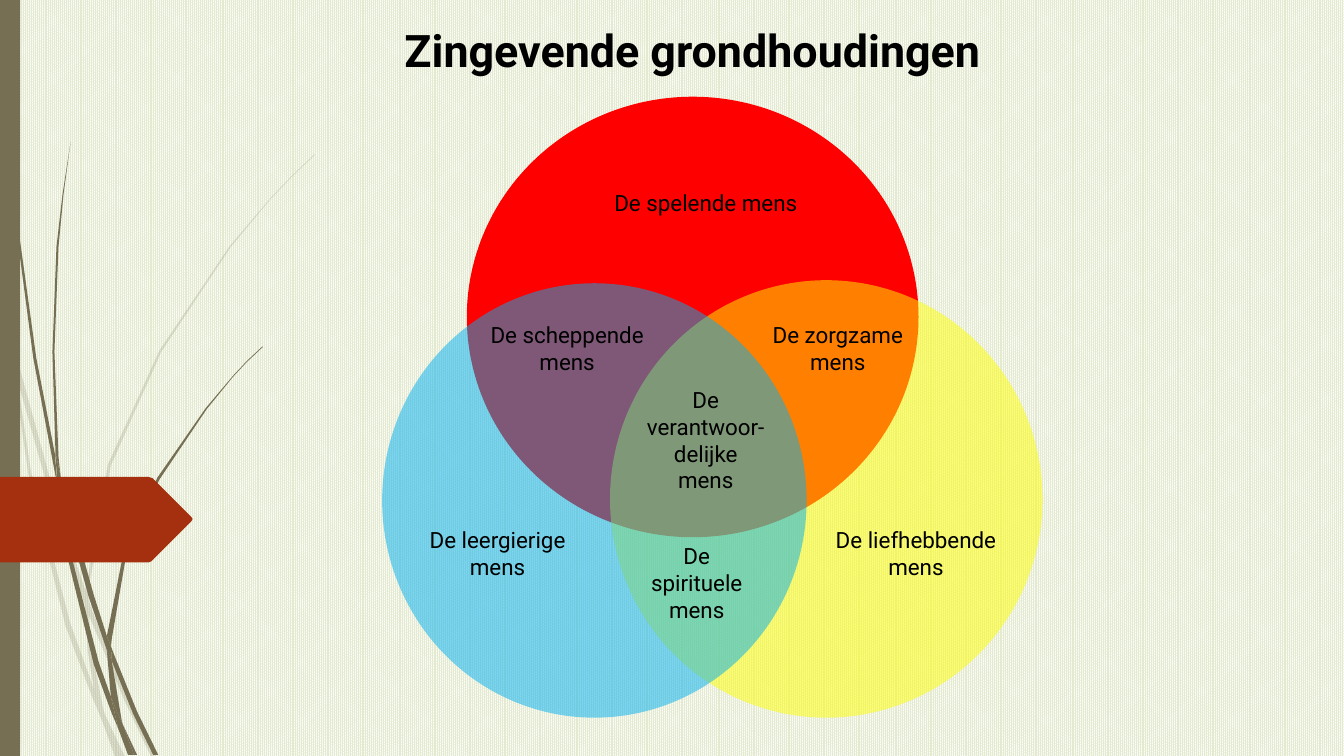
from lxml import etree
from pptx import Presentation
from pptx import util as u
from pptx.dml.color import RGBColor
from pptx.enum import dml, shapes, text
from pptx.oxml.ns import qn

FONT = "Roboto"
BLACK = "000000"
OLIVE = "766F54"
RUST = "A53010"

PALE_GRASS = [
    [(0.11, 3.5), (0.09, 3.22), (0, 2.82), (0, 2.99), (0.1, 3.44)],
    [(0.58, 5.22), (0.84, 5.99), (0.85, 5.86), (0.62, 5.2), (0.14, 3.45), (0.17, 3.76)],
    [(0.92, 6.07), (0.88, 5.96), (0.88, 6.1), (1.23, 6.94), (1.5, 7.51), (1.55, 7.51),
     (1.27, 6.92)],
    [(1.19, 7.51), (1.24, 7.51), (1.05, 7.11)],
    [(0.93, 6.83), (0.7, 6.19), (0.31, 4.69), (0.17, 3.76), (0.11, 3.5), (0.28, 4.7),
     (0.65, 6.21), (0.92, 6.93), (1.01, 7.14), (0.99, 7.07)],
    [(0.84, 5.99), (0.87, 6.46), (0.93, 6.83), (0.96, 6.92), (1.05, 7.11), (1.03, 7.06),
     (0.91, 6.46), (0.88, 6.1), (0.88, 6.08)],
    [(0.88, 5.84), (1.1, 4.62), (1.6, 3.49), (2.29, 2.45), (2.68, 1.98), (2.9, 1.75),
     (3.12, 1.54), (3.12, 1.53), (2.89, 1.75), (2.68, 1.97), (2.28, 2.44), (1.58, 3.48),
     (1.07, 4.61), (0.85, 5.84), (0.85, 5.86), (0.88, 5.96)],
    [(1.01, 7.14), (1.14, 7.51), (1.19, 7.51)],
    [(0.88, 6.08), (0.88, 6.1), (0.88, 5.96), (0.85, 5.86), (0.84, 5.99)],
    [(0.96, 6.92), (0.93, 6.83), (0.99, 7.07), (1.01, 7.14), (1.19, 7.51), (1.05, 7.11)],
]

DARK_GRASS = [
    [(0.07, 1.1), (0.17, 2.33), (0.33, 3.55), (0.56, 4.77), (0.57, 4.81), (0.55, 4.57),
     (0.55, 4.53), (0.36, 3.55), (0.19, 2.32), (0.08, 1.09), (0.05, 0.48), (0.04, 0),
     (0.03, 0), (0.04, 0.48)],
    [(0.88, 5.92), (1.06, 6.45), (1.06, 6.33), (1.06, 6.31), (0.93, 5.9), (0.6, 4.72),
     (0.64, 5.05)],
    [(1.13, 6.49), (1.1, 6.41), (1.11, 6.56), (1.32, 7.08), (1.52, 7.49), (1.57, 7.49),
     (1.36, 7.06)],
    [(1.1, 6.91), (0.98, 6.57), (0.72, 5.56), (0.64, 5.05), (0.57, 4.77), (0.68, 5.57),
     (0.93, 6.59), (1.11, 7.08), (1.17, 7.22), (1.16, 7.17)],
    [(0.6, 4.72), (0.58, 4.53), (0.54, 3.49), (0.58, 2.45), (0.63, 1.93), (0.7, 1.41),
     (0.62, 1.93), (0.56, 2.45), (0.52, 3.49), (0.55, 4.49)],
    [(1.33, 7.49), (1.36, 7.49), (1.22, 7.19)],
    [(0.57, 4.77), (0.64, 5.05), (0.6, 4.72), (0.55, 4.49), (0.55, 4.53)],
    [(1.11, 6.33), (1.25, 5.52), (1.58, 4.76), (2.05, 4.06), (2.31, 3.74), (2.45, 3.59),
     (2.61, 3.44), (2.6, 3.44), (2.45, 3.58), (2.31, 3.73), (2.04, 4.05), (1.56, 4.74),
     (1.22, 5.51), (1.06, 6.31), (1.1, 6.41)],
    [(1.17, 7.22), (1.27, 7.49), (1.31, 7.49)],
    [(1.06, 6.45), (1.1, 6.91), (1.16, 7.06), (1.22, 7.19), (1.21, 7.16), (1.11, 6.56),
     (1.09, 6.51)],
    [(1.06, 6.45), (1.09, 6.51), (1.11, 6.56), (1.1, 6.41), (1.06, 6.31), (1.06, 6.33)],
    [(1.16, 7.06), (1.1, 6.91), (1.16, 7.17), (1.17, 7.22), (1.3, 7.49), (1.33, 7.49),
     (1.22, 7.19)],
]

ARROW_TAG = [(1.47, 5.58), (1.5, 5.57), (1.51, 5.56), (1.9, 5.17), (1.91, 5.15),
             (1.9, 5.13), (1.51, 4.74), (1.5, 4.74), (1.47, 4.73), (0, 4.73), (0, 5.58)]

CIRCLES = [
    ((4.63, 0.96, 4.48, 4.37), "FF0000", 100),
    ((6.05, 2.78, 4.29, 4.34), "FFFF00", 50),
    ((3.79, 2.81, 4.21, 4.31), "00B0F0", 50),
]

LABELS = [
    ((5.88, 1.83, 2.24, 0.37), "De spelende mens"),
    ((7.53, 3.14, 1.56, 0.64), "De zorgzame mens"),
    ((8.07, 5.17, 2.03, 0.64), "De liefhebbende mens"),
    ((6.22, 5.33, 1.38, 0.91), "De spirituele mens"),
    ((3.92, 5.17, 2.03, 0.64), "De leergierige mens"),
    ((4.69, 3.14, 1.87, 0.64), "De scheppende mens"),
    ((6.22, 3.78, 1.56, 1.18), "De verantwoor-delijke\nmens"),
]


def color(value):
    return RGBColor.from_string(value)


def inches(values):
    return [u.Inches(value) for value in values]


def paint(shape, fill, opacity=100):
    shape.shadow.inherit = False
    shape.line.fill.background()
    shape.fill.solid()
    shape.fill.fore_color.rgb = color(fill)
    if opacity < 100:
        tint = shape.fill._xPr.find(qn("a:solidFill"))[0]
        etree.SubElement(tint, qn("a:alpha")).set("val", str(opacity * 1000))


def add_outline(parent, points, fill, opacity=100):
    corners = [inches(point) for point in points]
    builder = parent.shapes.build_freeform(*corners[0])
    builder.add_line_segments(corners[1:], close=True)
    paint(builder.convert_to_shape(), fill, opacity)


def add_grass(page, blades, opacity):
    group = page.shapes.add_group_shape()
    for blade in blades:
        add_outline(group, blade, OLIVE, opacity)


def add_preset(parent, kind, place, fill, opacity=100):
    paint(parent.shapes.add_shape(kind, *inches(place)), fill, opacity)


def write(box, words, size, bold=False):
    frame = box.text_frame
    frame.text = words
    frame.word_wrap = True
    frame.auto_size = text.MSO_AUTO_SIZE.SHAPE_TO_FIT_TEXT
    frame.vertical_anchor = text.MSO_ANCHOR.TOP
    for para in frame.paragraphs:
        para.alignment = text.PP_ALIGN.CENTER
        for span in para.runs:
            span.font.name = FONT
            span.font.size = u.Pt(size)
            span.font.bold = bold
            span.font.color.rgb = color(BLACK)


def add_title(page, place, words):
    title = page.shapes.title
    title.left, title.top, title.width, title.height = inches(place)
    write(title, words, 32, bold=True)


def set_background(page):
    fill = page.background.fill
    fill.patterned()
    fill.pattern = dml.MSO_PATTERN.PERCENT_90
    fill.fore_color.rgb = color("E3EACF")
    fill.back_color.rgb = color("FFFFFF")


def main():
    deck = Presentation()
    deck.slide_width, deck.slide_height = inches((13.33, 7.5))
    page = deck.slides.add_slide(deck.slide_layouts[5])
    set_background(page)
    add_grass(page, PALE_GRASS, 20)
    add_grass(page, DARK_GRASS, 100)
    add_preset(page, shapes.MSO_SHAPE.RECTANGLE, (0, 0, 0.2, 7.5), OLIVE)
    add_outline(page, ARROW_TAG, RUST)
    venn = page.shapes.add_group_shape()
    for place, fill, opacity in CIRCLES:
        add_preset(venn, shapes.MSO_SHAPE.OVAL, place, fill, opacity)
    add_title(page, (1.97, 0.18, 9.8, 0.64), "Zingevende grondhoudingen")
    for place, words in LABELS:
        write(page.shapes.add_textbox(*inches(place)), words, 16)
    deck.save("out.pptx")


if __name__ == "__main__":
    main()
